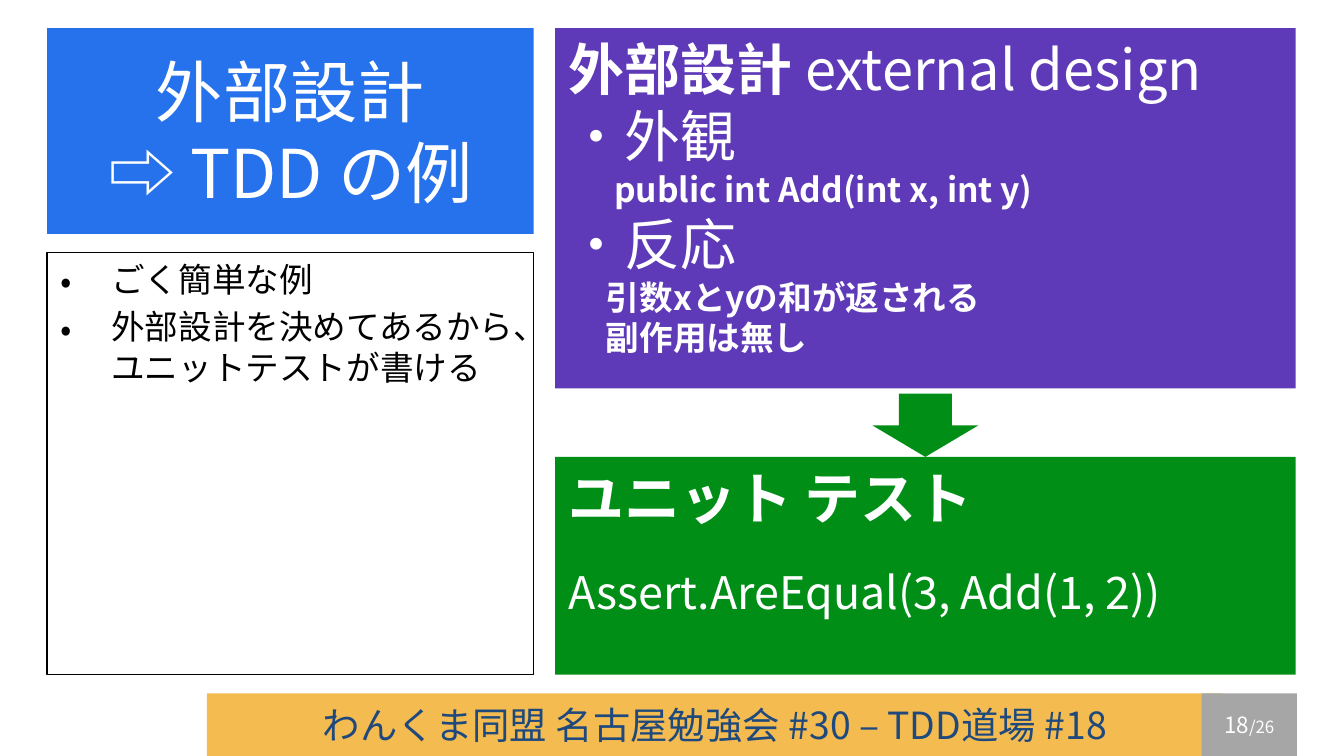
from dataclasses import dataclass

from lxml.etree import SubElement
from pptx import Presentation
from pptx.dml.color import RGBColor as Color
from pptx.enum.shapes import MSO_SHAPE as Shape
from pptx.enum.text import MSO_ANCHOR as Anchor, MSO_AUTO_SIZE as AutoSize, PP_ALIGN as Align
from pptx.oxml.ns import qn
from pptx.util import Inches, Pt


@dataclass(frozen=True)
class Theme:
    font: str = "Noto Sans CJK JP"
    white: str = "FFFFFF"
    black: str = "000000"
    navy: str = "1F497D"
    blue: str = "2672EC"
    purple: str = "5E3AB8"
    green: str = "008E17"
    amber: str = "F3BB50"
    gray: str = "A6A6A6"
    title: int = 36
    heading: int = 30
    code: int = 24
    footer: int = 20
    body: int = 18
    page: int = 12
    total: int = 9


THEME = Theme()


@dataclass(frozen=True)
class Box:
    left: float
    top: float
    width: float
    height: float

    def place(self):
        return [Inches(n) for n in (self.left, self.top, self.width, self.height)]


def style(para, size, color, bold=False, align=Align.LEFT):
    para.alignment = align
    font = para.font
    font.size, font.bold, font.name = Pt(size), bold, THEME.font
    font.color.rgb = Color.from_string(color)
    SubElement(font._rPr, qn("a:ea"), typeface=THEME.font)


def indent(para, left, hanging=0, bullet=None):
    properties = para._p.get_or_add_pPr()
    properties.set("marL", str(Inches(left)))
    properties.set("indent", str(-Inches(hanging)))
    if bullet:
        SubElement(properties, qn("a:buFont"), typeface=THEME.font)
        SubElement(properties, qn("a:buChar"), char=bullet)


def add_para(frame, text, size, color=THEME.white, bold=False, left=0):
    first = not frame.paragraphs[0].runs
    para = frame.paragraphs[0] if first else frame.add_paragraph()
    para.add_run().text = text
    if left:
        indent(para, left)
    style(para, size, color, bold)
    return para


def add_panel(page, box, fill=None, line=None, kind=Shape.RECTANGLE, anchor=Anchor.TOP):
    panel = page.shapes.add_shape(kind, *box.place())
    panel.shadow.inherit = False
    if fill:
        panel.fill.solid()
        panel.fill.fore_color.rgb = Color.from_string(fill)
    else:
        panel.fill.background()
    if line:
        panel.line.color.rgb = Color.from_string(line)
        panel.line.width = Pt(0.75)
    else:
        panel.line.fill.background()
    panel.text_frame.word_wrap = True
    panel.text_frame.vertical_anchor = anchor
    return panel.text_frame


def add_footer(page, box):
    number_width = 0.71
    bar = Box(box.left, box.top, 7.56, box.height)
    number = Box(box.left + box.width - number_width, box.top, number_width, box.height)
    frame = add_panel(page, bar, THEME.amber, anchor=Anchor.MIDDLE)
    para = add_para(frame, "わんくま同盟 名古屋勉強会 #30 – TDD道場 #18", THEME.footer, THEME.navy)
    para.alignment = Align.CENTER
    frame = add_panel(page, number, THEME.gray, anchor=Anchor.MIDDLE)
    para = add_para(frame, "18", THEME.page)
    para.alignment = Align.CENTER
    span = para.add_run()
    span.text = "/26"
    span.font.size = Pt(THEME.total)


def add_title(page, box):
    title = page.shapes.title
    title.left, title.top, title.width, title.height = box.place()
    title.fill.solid()
    title.fill.fore_color.rgb = Color.from_string(THEME.blue)
    frame = title.text_frame
    frame.text = "外部設計\v⇨ TDD の例"
    frame.word_wrap = True
    frame.auto_size = AutoSize.NONE
    frame.vertical_anchor = Anchor.MIDDLE
    style(frame.paragraphs[0], THEME.title, THEME.white, align=Align.CENTER)


def add_notes_list(page, box):
    frame = add_panel(page, box, line=THEME.black)
    items = ["ごく簡単な例", "外部設計を決めてあるから、ユニットテストが書ける"]
    for index, item in enumerate(items):
        para = frame.add_paragraph() if index else frame.paragraphs[0]
        para.text = item
        if index:
            para.space_before = Pt(THEME.body * 0.2)
        indent(para, 0.38, 0.38, "•")
        style(para, THEME.body, THEME.black)


def add_external_design(page, box):
    frame = add_panel(page, box, THEME.purple)
    heading = add_para(frame, "外部設計 ", THEME.heading, bold=True)
    span = heading.add_run()
    span.text = "external design"
    span.font.bold = False
    add_para(frame, "・外観", THEME.heading)
    add_para(frame, "public int Add(int x, int y)", THEME.body, bold=True, left=0.34)
    add_para(frame, "・反応", THEME.heading)
    for text in ("引数xとyの和が返される", "副作用は無し"):
        add_para(frame, text, THEME.body, bold=True, left=0.28)


def add_unit_test(page, box):
    frame = add_panel(page, box, THEME.green)
    add_para(frame, "ユニット テスト", THEME.heading, bold=True)
    para = add_para(frame, "Assert.AreEqual(3, Add(1, 2))", THEME.code)
    para.space_before = Pt(18)


def add_flow(page, box):
    design_height, test_height, arrow_height, arrow_width = 2.68, 1.62, 0.47, 0.79
    test_top = box.top + box.height - test_height
    add_external_design(page, Box(box.left, box.top, box.width, design_height))
    add_unit_test(page, Box(box.left, test_top, box.width, test_height))
    arrow_left = box.left + (box.width - arrow_width) / 2
    arrow = Box(arrow_left, test_top - arrow_height, arrow_width, arrow_height)
    add_panel(page, arrow, THEME.green, kind=Shape.DOWN_ARROW)


def main():
    deck = Presentation()
    deck.slide_width = Inches(10)
    deck.slide_height = Inches(10 * 9 / 16)
    page = deck.slides.add_slide(deck.slide_layouts[5])
    add_footer(page, Box(1.54, 5.16, 8.11, 0.47))
    add_title(page, Box(0.35, 0.21, 3.62, 1.53))
    add_notes_list(page, Box(0.35, 1.88, 3.62, 3.14))
    add_flow(page, Box(4.13, 0.21, 5.51, 4.81))
    deck.save("out.pptx")


if __name__ == "__main__":
    main()
